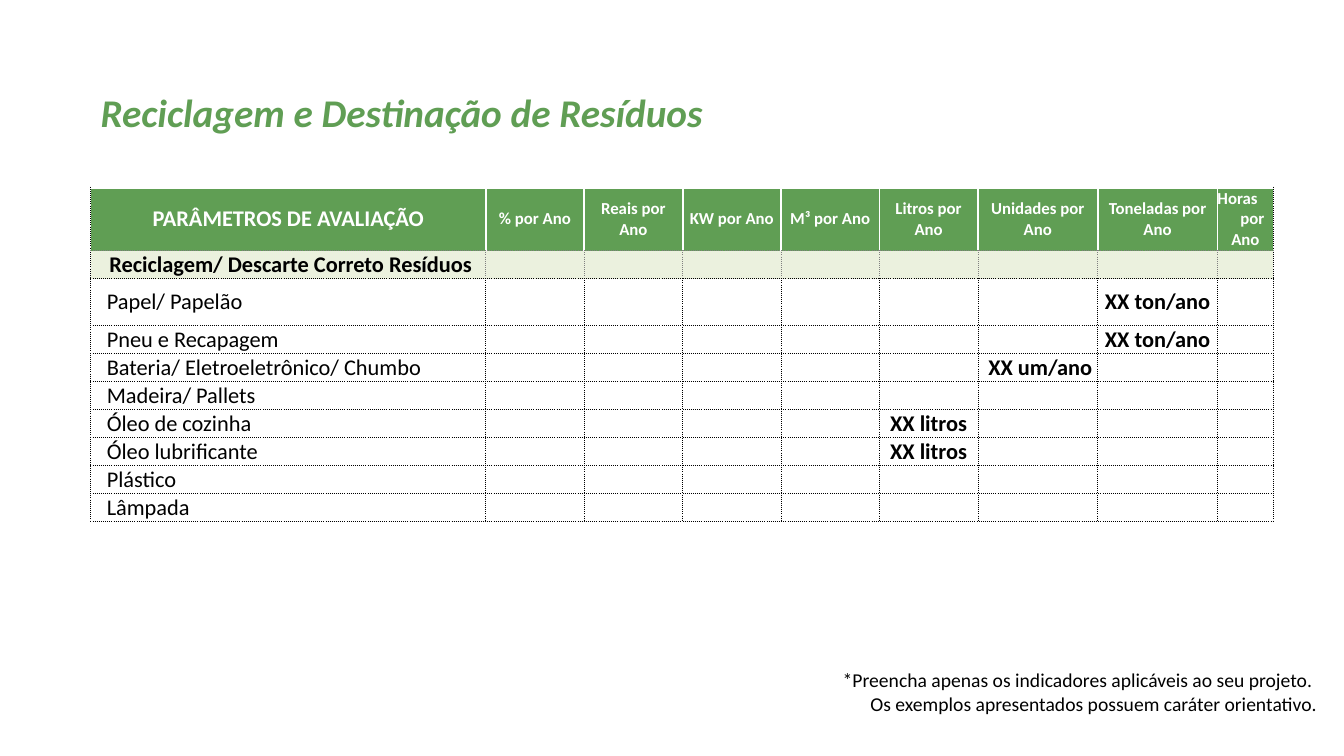
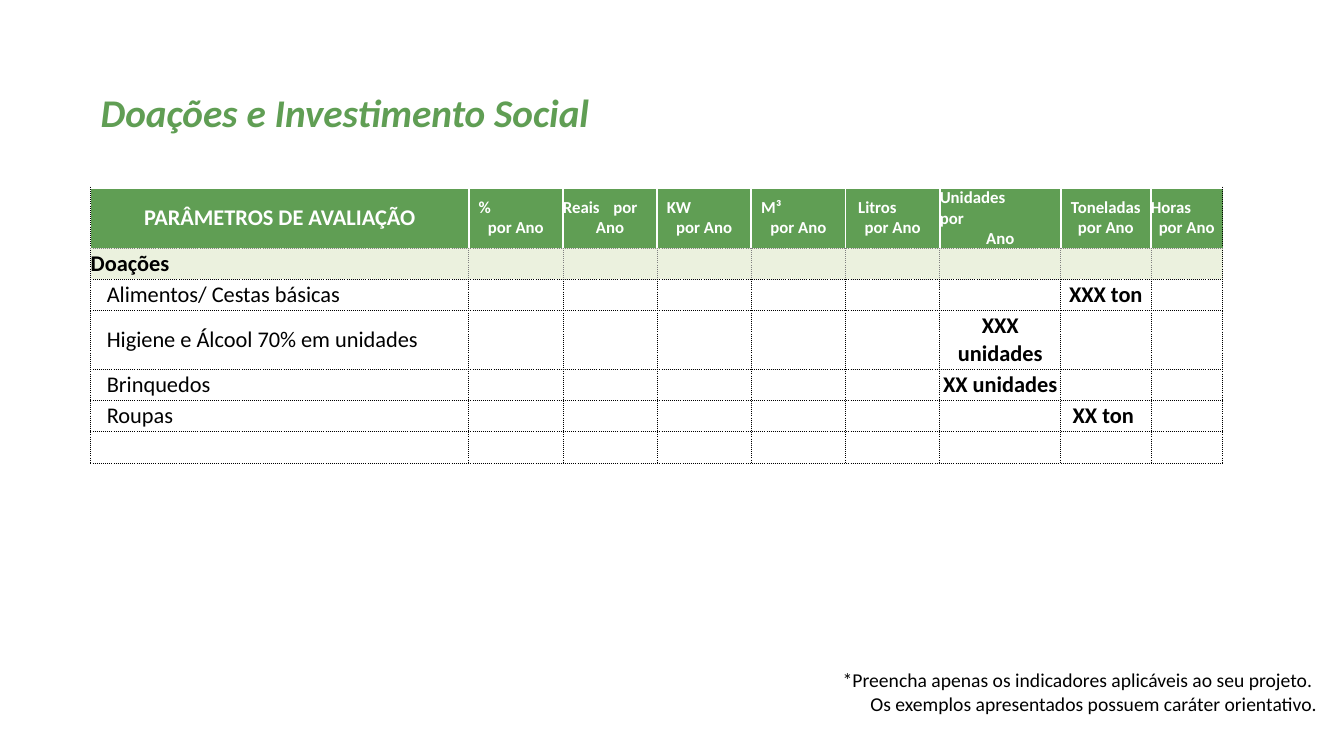
from collections import namedtuple

from pptx import Presentation
from pptx.dml.color import RGBColor
from pptx.enum.text import MSO_ANCHOR, PP_ALIGN
from pptx.oxml.xmlchemy import OxmlElement
from pptx.util import Pt

GREEN = RGBColor(0x60, 0x9E, 0x54)
PALE_GREEN = RGBColor(0xEB, 0xF1, 0xDE)
WHITE = RGBColor(0xFF, 0xFF, 0xFF)
GRAY = RGBColor(0x80, 0x80, 0x80)
BLACK = RGBColor(0x00, 0x00, 0x00)
FONT = "Calibri"

LEFT = 64.8
TABLE_TOP = 134
LABEL_INDENT = 11.5
SPACE_WIDTH = 3.6
BODY_SIZE = 16
UNIT_SIZE = 12

Line = namedtuple("Line", "text align indent tab", defaults=(PP_ALIGN.CENTER, 0, None))
Border = namedtuple("Border", "color width dash")
Entry = namedtuple("Entry", "text left right", defaults=(0, 0))
Sheet = namedtuple("Sheet", "title widths heights units section labels entries")

BLACK_DOTS = Border(BLACK, 0.5, "dot")
GRAY_DOTS = Border(GRAY, 0.5, "dot")
WHITE_LINE = Border(WHITE, 1.5, "solid")

HEADING = "PARÂMETROS DE AVALIAÇÃO"
FOOTNOTE = (
    "*Preencha apenas os indicadores aplicáveis ao seu projeto. \n"
    "Os exemplos apresentados possuem caráter orientativo."
)


def stacked(text, indent):
    return [Line(text, PP_ALIGN.LEFT, indent), Line("por Ano")]


def spread(text, width):
    return [Line(f"{text}\tpor", PP_ALIGN.LEFT, 0, width), Line("Ano")]


RECYCLING = Sheet(
    title="Reciclagem e Destinação de Resíduos",
    widths=[282.2] + [70.3] * 5 + [85.6] * 2 + [39.8],
    heights=[45, 20, 33.6] + [20] * 7,
    units=[
        [Line("% por Ano")],
        [Line("Reais por\nAno")],
        [Line("KW por Ano")],
        [Line("M³ por Ano")],
        [Line("Litros por\nAno")],
        [Line("Unidades por\nAno")],
        [Line("Toneladas por\nAno")],
        [Line("Horas", PP_ALIGN.LEFT), Line("por", indent=10), Line("Ano")],
    ],
    section=(Line("Reciclagem/ Descarte Correto Resíduos"), SPACE_WIDTH),
    labels=[
        "Papel/ Papelão",
        "Pneu e Recapagem",
        "Bateria/ Eletroeletrônico/ Chumbo",
        "Madeira/ Pallets",
        "Óleo de cozinha",
        "Óleo lubrificante",
        "Plástico",
        "Lâmpada",
    ],
    entries={
        (2, 7): Entry("XX ton/ano"),
        (3, 7): Entry("XX ton/ano"),
        (4, 6): Entry("XX um/ano", left=SPACE_WIDTH),
        (6, 5): Entry("XX litros"),
        (7, 5): Entry("XX litros"),
    },
)

DONATIONS = Sheet(
    title="Doações e Investimento Social",
    widths=[270] + [67.3] * 5 + [86.4, 64.4, 51.3],
    heights=[37.4, 22.3, 22.3, 42] + [22.3] * 3,
    units=[
        stacked("%", 7),
        spread("Reais", 67),
        stacked("KW", 7),
        stacked("M³", 7),
        stacked("Litros", 9),
        spread("Unidades", 86),
        [Line("Toneladas\npor Ano")],
        stacked("Horas", 0),
    ],
    section=(Line("Doações", PP_ALIGN.LEFT), 0),
    labels=[
        "Alimentos/ Cestas básicas",
        "Higiene e Álcool 70% em unidades",
        "Brinquedos",
        "Roupas",
        "",
    ],
    entries={
        (2, 7): Entry("XXX ton"),
        (3, 6): Entry("XXX\nunidades"),
        (4, 6): Entry("XX unidades"),
        (5, 7): Entry("XX ton", right=SPACE_WIDTH),
    },
)


def add_text(para, text, size, color=BLACK, bold=False, italic=False):
    for index, piece in enumerate(text.split("\n")):
        if index:
            para.add_line_break()
        span = para.add_run()
        span.text = piece
        span.font.name = FONT
        span.font.size = Pt(size)
        span.font.bold = bold
        span.font.italic = italic
        span.font.color.rgb = color


def add_box(page, left, top, width, height):
    box = page.shapes.add_textbox(Pt(left), Pt(top), Pt(width), Pt(height))
    box.text_frame.word_wrap = True
    return box.text_frame.paragraphs[0]


def add_title(page, text):
    para = add_box(page, LEFT, 54.7, 777, 44)
    para.line_spacing = 1.15
    para.space_after = Pt(4)
    add_text(para, text, 28, GREEN, bold=True, italic=True)


def add_footnote(page):
    para = add_box(page, 468, 473.8, 480, 41)
    para.alignment = PP_ALIGN.RIGHT
    add_text(para, FOOTNOTE, 14)


def set_indent(para, line):
    properties = para._p.get_or_add_pPr()
    properties.set("marL", str(Pt(line.indent)))
    properties.set("indent", "0")
    if line.tab:
        stops = OxmlElement("a:tabLst")
        stop = OxmlElement("a:tab")
        stop.set("pos", str(Pt(line.tab)))
        stop.set("algn", "r")
        stops.append(stop)
        properties.append(stops)


def set_border(cell, side, border):
    line = OxmlElement(f"a:ln{side}")
    line.set("w", str(Pt(border.width)))
    fill = OxmlElement("a:solidFill")
    color = OxmlElement("a:srgbClr")
    color.set("val", str(border.color))
    fill.append(color)
    dash = OxmlElement("a:prstDash")
    dash.set("val", border.dash)
    line.extend([fill, dash])
    cell._tc.get_or_add_tcPr().append(line)


def cell_borders(row, column, last_column):
    inner = {0: WHITE_LINE, 1: GRAY_DOTS}.get(row, BLACK_DOTS)
    return {
        "L": BLACK_DOTS if column == 0 else inner,
        "R": BLACK_DOTS if column == last_column else inner,
        "T": {0: WHITE_LINE, 1: GRAY_DOTS}.get(row, BLACK_DOTS),
        "B": GRAY_DOTS if row == 0 else BLACK_DOTS,
    }


def style_cell(cell, row, column, last_column):
    cell.margin_left = cell.margin_right = cell.margin_top = cell.margin_bottom = 0
    cell.vertical_anchor = MSO_ANCHOR.MIDDLE
    for side, border in cell_borders(row, column, last_column).items():
        set_border(cell, side, border)
    cell.fill.solid()
    cell.fill.fore_color.rgb = {0: GREEN, 1: PALE_GREEN}.get(row, WHITE)
    ending = OxmlElement("a:endParaRPr")
    ending.set("sz", str(UNIT_SIZE * 100))
    cell.text_frame.paragraphs[0]._p.append(ending)


def fill_cell(cell, lines, size=BODY_SIZE, color=BLACK, bold=True, left=0, right=0):
    cell.margin_left = Pt(left)
    cell.margin_right = Pt(right)
    frame = cell.text_frame
    for index, line in enumerate(lines):
        para = frame.add_paragraph() if index else frame.paragraphs[0]
        set_indent(para, line)
        para.alignment = line.align
        add_text(para, line.text, size, color, bold)


def add_grid(page, sheet):
    rows, columns = len(sheet.heights), len(sheet.widths)
    frame = page.shapes.add_table(
        rows, columns, Pt(LEFT), Pt(TABLE_TOP), Pt(sum(sheet.widths)), Pt(sum(sheet.heights))
    )
    table = frame.table
    table.first_row = table.horz_banding = False
    for column, width in zip(table.columns, sheet.widths):
        column.width = Pt(width)
    for row, height in zip(table.rows, sheet.heights):
        row.height = Pt(height)
    for row in range(rows):
        for column in range(columns):
            style_cell(table.cell(row, column), row, column, columns - 1)
    return table


def add_indicators(page, sheet):
    table = add_grid(page, sheet)
    fill_cell(table.cell(0, 0), [Line(HEADING)], color=WHITE)
    for column, lines in enumerate(sheet.units, 1):
        fill_cell(table.cell(0, column), lines, UNIT_SIZE, WHITE)
    section, margin = sheet.section
    fill_cell(table.cell(1, 0), [section], left=margin)
    for row, label in enumerate(sheet.labels, 2):
        if label:
            line = Line(label, PP_ALIGN.LEFT)
            fill_cell(table.cell(row, 0), [line], bold=False, left=LABEL_INDENT)
    for (row, column), entry in sheet.entries.items():
        fill_cell(
            table.cell(row, column), [Line(entry.text)], left=entry.left, right=entry.right
        )


def main():
    deck = Presentation()
    deck.slide_width, deck.slide_height = Pt(960), Pt(540)
    for sheet in (RECYCLING, DONATIONS):
        page = deck.slides.add_slide(deck.slide_layouts[6])
        add_indicators(page, sheet)
        add_title(page, sheet.title)
        add_footnote(page)
    deck.save("out.pptx")


if __name__ == "__main__":
    main()
